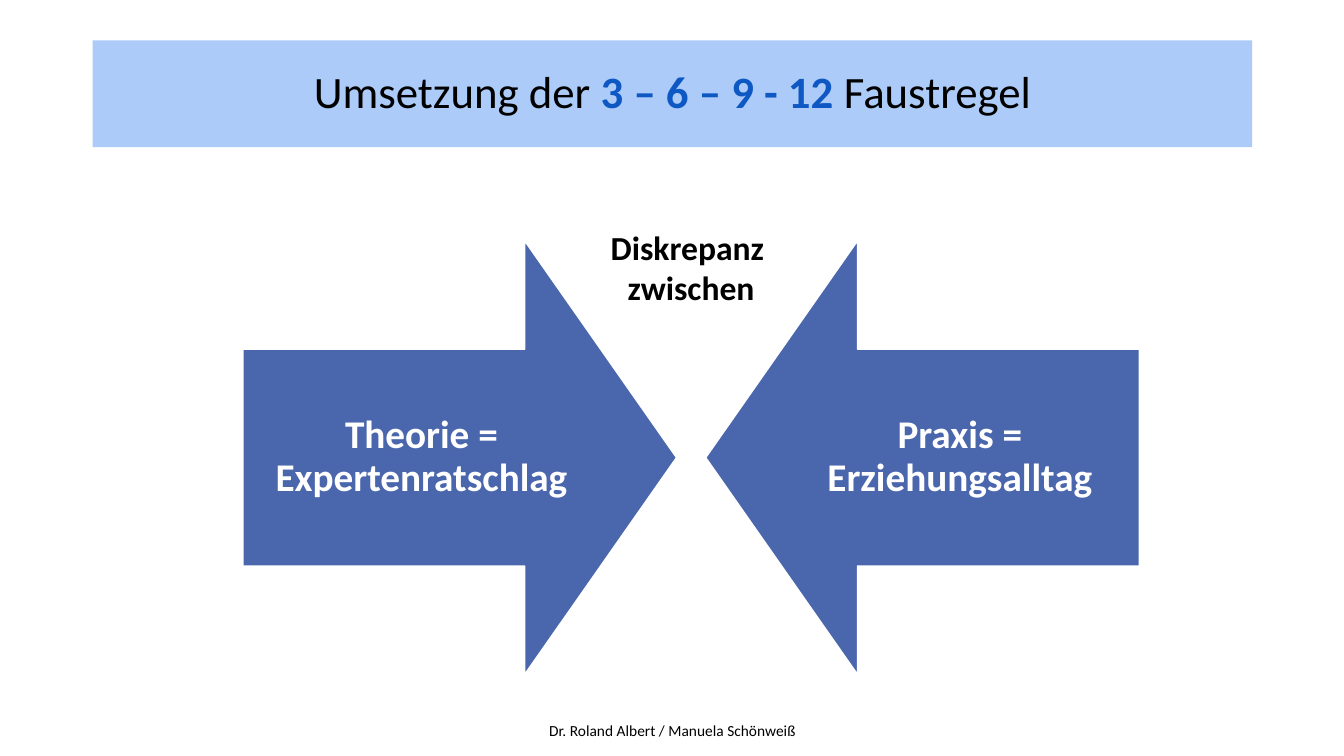
from pptx import Presentation
from pptx.dml.color import RGBColor
from pptx.enum import shapes, text
from pptx.util import Inches, Pt

FONT = "Calibri"
BLACK, WHITE = "000000", "FFFFFF"
BANNER, ARROW, ACCENT = "ACCBF9", "4A66AC", "0E58C4"


def color(value):
    return RGBColor.from_string(value)


def add_filled_shape(slide, kind, box, fill, outline=None):
    shape = slide.shapes.add_shape(kind, *map(Inches, box))
    shape.shadow.inherit = False
    shape.fill.solid()
    shape.fill.fore_color.rgb = color(fill)
    if outline:
        shape.line.color.rgb = color(outline)
        shape.line.width = Pt(1)
    else:
        shape.line.fill.background()
    return shape


def write_text(shape, paragraphs, size, spacing=1.0, **frame_format):
    """Each paragraph is a list of (text, colour, bold) runs."""
    frame = shape.text_frame
    frame_values = {"word_wrap": True, "vertical_anchor": text.MSO_ANCHOR.MIDDLE}
    for name, value in (frame_values | frame_format).items():
        setattr(frame, name, value)
    for index, runs in enumerate(paragraphs):
        paragraph = frame.add_paragraph() if index else frame.paragraphs[0]
        paragraph.alignment = text.PP_ALIGN.CENTER
        paragraph.line_spacing = spacing
        for content, run_color, bold in runs:
            run = paragraph.add_run()
            run.text = content
            for name, value in {"name": FONT, "size": Pt(size), "bold": bold}.items():
                setattr(run.font, name, value)
            run.font.color.rgb = color(run_color)


def add_label(slide, box, paragraphs, size, **text_format):
    label = slide.shapes.add_textbox(*map(Inches, box))
    write_text(label, paragraphs, size, **text_format)


def add_arrow(slide, kind, left, label_left, label):
    arrow = add_filled_shape(slide, kind, (left, 2.39, 4.3, 4.3), ARROW, WHITE)
    arrow.adjustments[0] = 0.5
    arrow.adjustments[1] = 0.35
    margins = {f"margin_{side}": Inches(0.22) for side in ("left", "top", "right", "bottom")}
    add_label(slide, (label_left, 3.46, 3.54, 2.15), [[(label, WHITE, True)]], 28,
              spacing=0.9, **margins)


def main():
    presentation = Presentation()
    presentation.slide_width = Inches(13.33)
    presentation.slide_height = Inches(7.5)
    slide = presentation.slides.add_slide(presentation.slide_layouts[6])

    # Title banner
    banner = add_filled_shape(slide, shapes.MSO_SHAPE.RECTANGLE, (0.92, 0.4, 11.5, 1.06), BANNER)
    title = [("Umsetzung der ", BLACK, False), ("3 – 6 – 9 - 12", ACCENT, True),
             (" Faustregel", BLACK, False)]
    write_text(banner, [title], 32, spacing=0.9)

    # Opposing arrows
    add_arrow(slide, shapes.MSO_SHAPE.RIGHT_ARROW, 2.41, 2.41, "Theorie = Expertenratschlag")
    add_arrow(slide, shapes.MSO_SHAPE.LEFT_ARROW, 7, 7.75, "Praxis = Erziehungsalltag")

    # Heading between the arrows, and footer
    free_text = {"word_wrap": False, "vertical_anchor": text.MSO_ANCHOR.TOP,
                 "auto_size": text.MSO_AUTO_SIZE.SHAPE_TO_FIT_TEXT}
    heading = [[("Diskrepanz ", BLACK, True)], [("zwischen", BLACK, True)]]
    add_label(slide, (5.95, 2.2, 1.81, 0.91), heading, 24, **free_text)
    footer = [[("Dr. Roland Albert / Manuela Schönweiß", BLACK, False)]]
    add_label(slide, (5.33, 7.1, 2.68, 0.29), footer, 11, **free_text)

    presentation.save("out.pptx")


if __name__ == "__main__":
    main()
